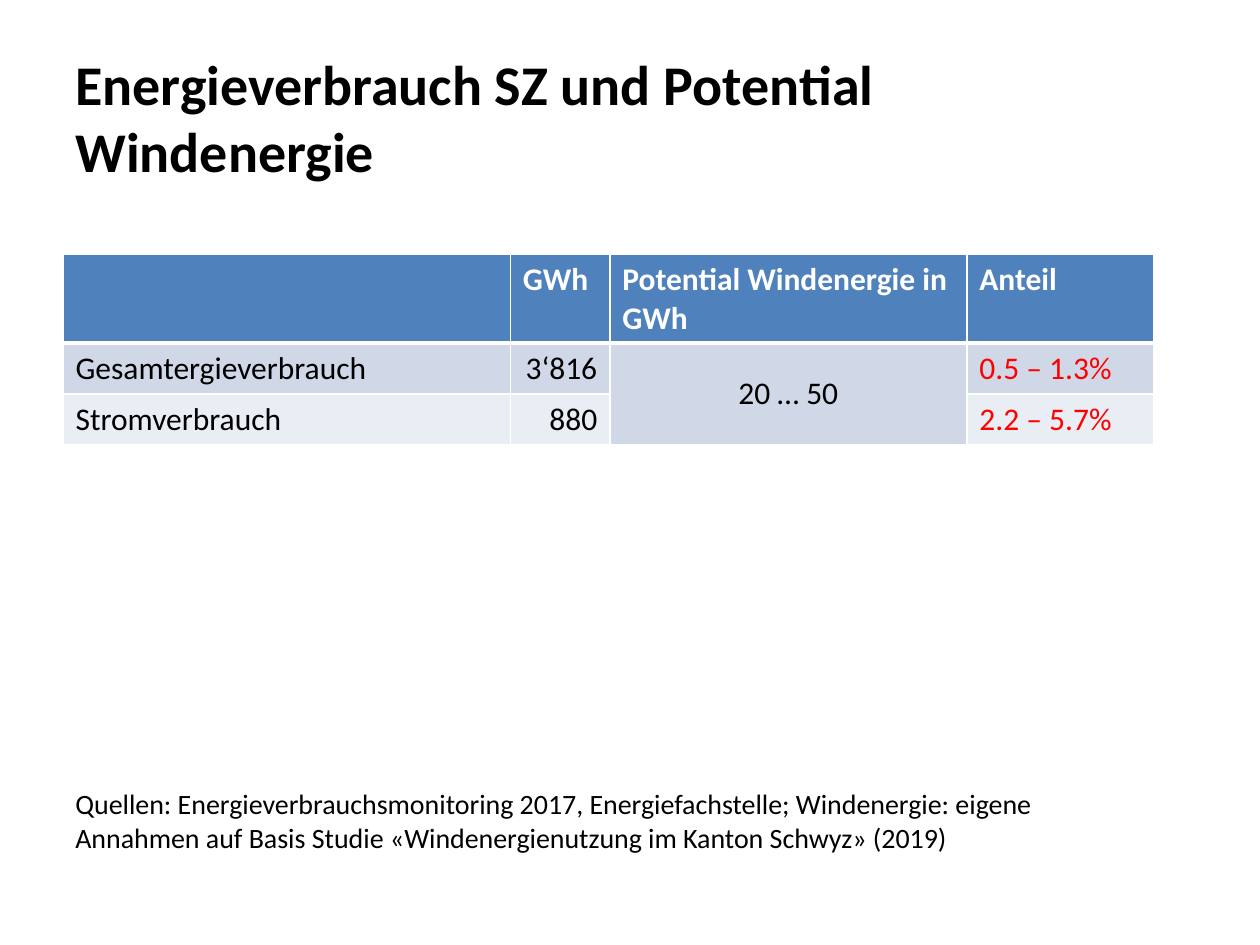
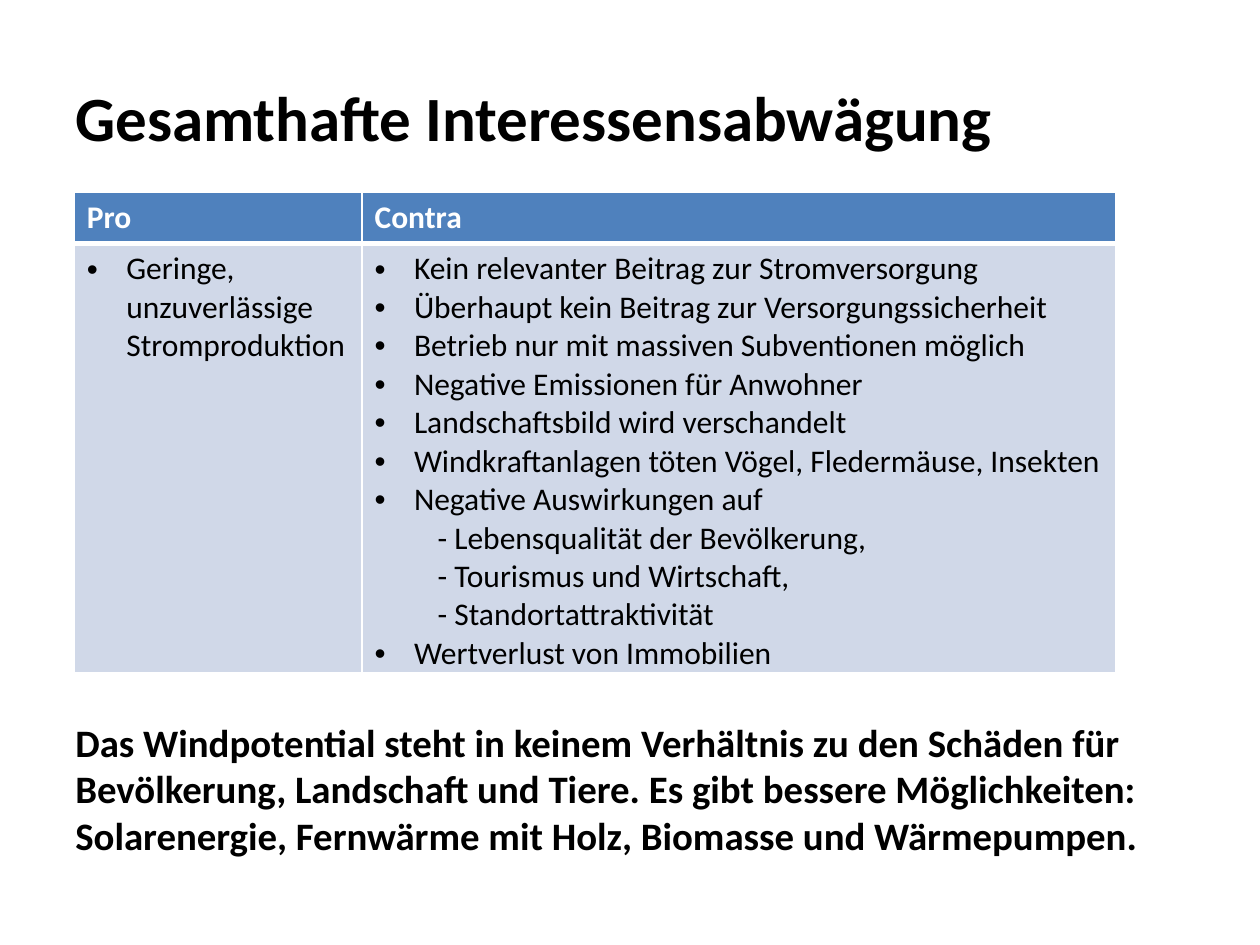
from lxml import etree
from pptx import Presentation
from pptx.dml.color import RGBColor
from pptx.enum import text as t
from pptx.oxml import ns
from pptx.util import Pt

FONT = "Calibri"
BLACK, WHITE, RED = "000000", "FFFFFF", "FF0000"
HEADER, ROW_DARK, ROW_LIGHT = "4F81BD", "D0D8E8", "E9EDF4"
LEFT, RIGHT, CENTER = t.PP_ALIGN.LEFT, t.PP_ALIGN.RIGHT, t.PP_ALIGN.CENTER
TOP, MIDDLE = t.MSO_ANCHOR.TOP, t.MSO_ANCHOR.MIDDLE
INDENT = 22.5
LINE_HEIGHT = 29.2


def color(hex_value):
    return RGBColor.from_string(hex_value)


def add_bullet(paragraph):
    props = paragraph._p.get_or_add_pPr()
    props.set("marL", str(Pt(INDENT)))
    props.set("indent", str(-Pt(INDENT)))
    etree.SubElement(props, ns.qn("a:buFont"), typeface="Arial")
    etree.SubElement(props, ns.qn("a:buChar"), char="•")


def write(frame, paragraphs, size=18, ink=BLACK, bold=False, align=LEFT, bullet=False):
    frame.word_wrap = True
    for index, line in enumerate(paragraphs):
        paragraph = frame.add_paragraph() if index else frame.paragraphs[0]
        paragraph.text = line
        paragraph.alignment = align
        if bullet:
            add_bullet(paragraph)
        for run in paragraph.runs:
            run.font.name, run.font.size, run.font.bold = FONT, Pt(size), bold
            run.font.color.rgb = color(ink)


def text_block(slide, box, content, anchor=TOP, **style):
    frame = slide.shapes.add_textbox(*map(Pt, box)).text_frame
    frame.vertical_anchor = anchor
    write(frame, [content], **style)


def title(slide, content, width, size):
    text_block(slide, (36, 21.6, width, 90), content, anchor=MIDDLE, size=size, bold=True)


def border(cell, top, bottom):
    props = cell._tc.get_or_add_tcPr()
    for side, width in (("L", 1), ("R", 1), ("T", top), ("B", bottom)):
        edge = etree.SubElement(props, ns.qn("a:ln" + side), w=str(Pt(width)))
        fill = etree.SubElement(edge, ns.qn("a:solidFill"))
        etree.SubElement(fill, ns.qn("a:srgbClr"), val=WHITE)


def add_table(slide, left, top, column_widths, row_heights, headings):
    table = slide.shapes.add_table(
        len(row_heights), len(column_widths), Pt(left), Pt(top),
        Pt(sum(column_widths)), Pt(sum(row_heights))).table
    for column, width in zip(table.columns, column_widths):
        column.width = Pt(width)
    for index, (row, height) in enumerate(zip(table.rows, row_heights)):
        row.height = Pt(height)
        for cell in row.cells:
            border(cell, 3 if index == 1 else 1, 3 if index == 0 else 1)
            cell.fill.solid()
            cell.fill.fore_color.rgb = color((HEADER, ROW_DARK, ROW_LIGHT)[index])
    for cell, heading in zip(table.rows[0].cells, headings):
        write(cell.text_frame, [heading], ink=WHITE, bold=True)
    return table


def consumption_table(slide, left, top):
    table = add_table(slide, left, top, (255.6, 56.9, 204, 106.9),
                      (50, LINE_HEIGHT, LINE_HEIGHT),
                      ("", "GWh", "Potential Windenergie in GWh", "Anteil"))
    consumers = (("Gesamtergieverbrauch", "3‘816", "0.5 – 1.3%"),
                 ("Stromverbrauch", "880", "2.2 – 5.7%"))
    for row, (consumer, amount, share) in enumerate(consumers, 1):
        write(table.cell(row, 0).text_frame, [consumer])
        write(table.cell(row, 1).text_frame, [amount], align=RIGHT)
        write(table.cell(row, 3).text_frame, [share], ink=RED)
    potential = table.cell(1, 2)
    potential.merge(table.cell(2, 2))
    potential.vertical_anchor = MIDDLE
    write(potential.text_frame, ["20 … 50"], align=CENTER)


def argument_table(slide, left, top):
    table = add_table(slide, left, top, (164.4, 430.8), (LINE_HEIGHT, 245),
                      ("Pro", "Contra"))
    pros = ["Geringe, unzuverlässige Stromproduktion"]
    cons = [
        "Kein relevanter Beitrag zur Stromversorgung",
        "Überhaupt kein Beitrag zur Versorgungssicherheit",
        "Betrieb nur mit massiven Subventionen möglich",
        "Negative Emissionen für Anwohner",
        "Landschaftsbild wird verschandelt",
        "Windkraftanlagen töten Vögel, Fledermäuse, Insekten",
        "\v\t- ".join(("Negative Auswirkungen auf", "Lebensqualität der Bevölkerung,",
                       "Tourismus und Wirtschaft,", "Standortattraktivität")),
        "Wertverlust von Immobilien",
    ]
    for column, arguments in enumerate((pros, cons)):
        write(table.cell(1, column).text_frame, arguments, bullet=True)


def consumption_slide(slide):
    title(slide, "Energieverbrauch SZ und Potential Windenergie", 590.4, 32)
    text_block(slide, (36, 446, 623.5, 58),
               "Quellen: Energieverbrauchsmonitoring 2017, Energiefachstelle; "
               "Windenergie: eigene Annahmen auf Basis Studie "
               "«Windenergienutzung im Kanton Schwyz» (2019)", size=16)
    consumption_table(slide, 36, 145.5)


def assessment_slide(slide):
    title(slide, "Gesamthafte Interessensabwägung", 573, 36)
    text_block(slide, (36, 407, 648, 108),
               "Das Windpotential steht in keinem Verhältnis zu den Schäden für "
               "Bevölkerung, Landschaft und Tiere. Es gibt bessere Möglichkeiten: "
               "Solarenergie, Fernwärme mit Holz, Biomasse und Wärmepumpen.",
               size=22.2, bold=True)
    argument_table(slide, 42.5, 110)


def main():
    deck = Presentation()
    deck.slide_width, deck.slide_height = Pt(720), Pt(540)
    for build in (consumption_slide, assessment_slide):
        build(deck.slides.add_slide(deck.slide_layouts[6]))
    deck.save("out.pptx")


if __name__ == "__main__":
    main()
